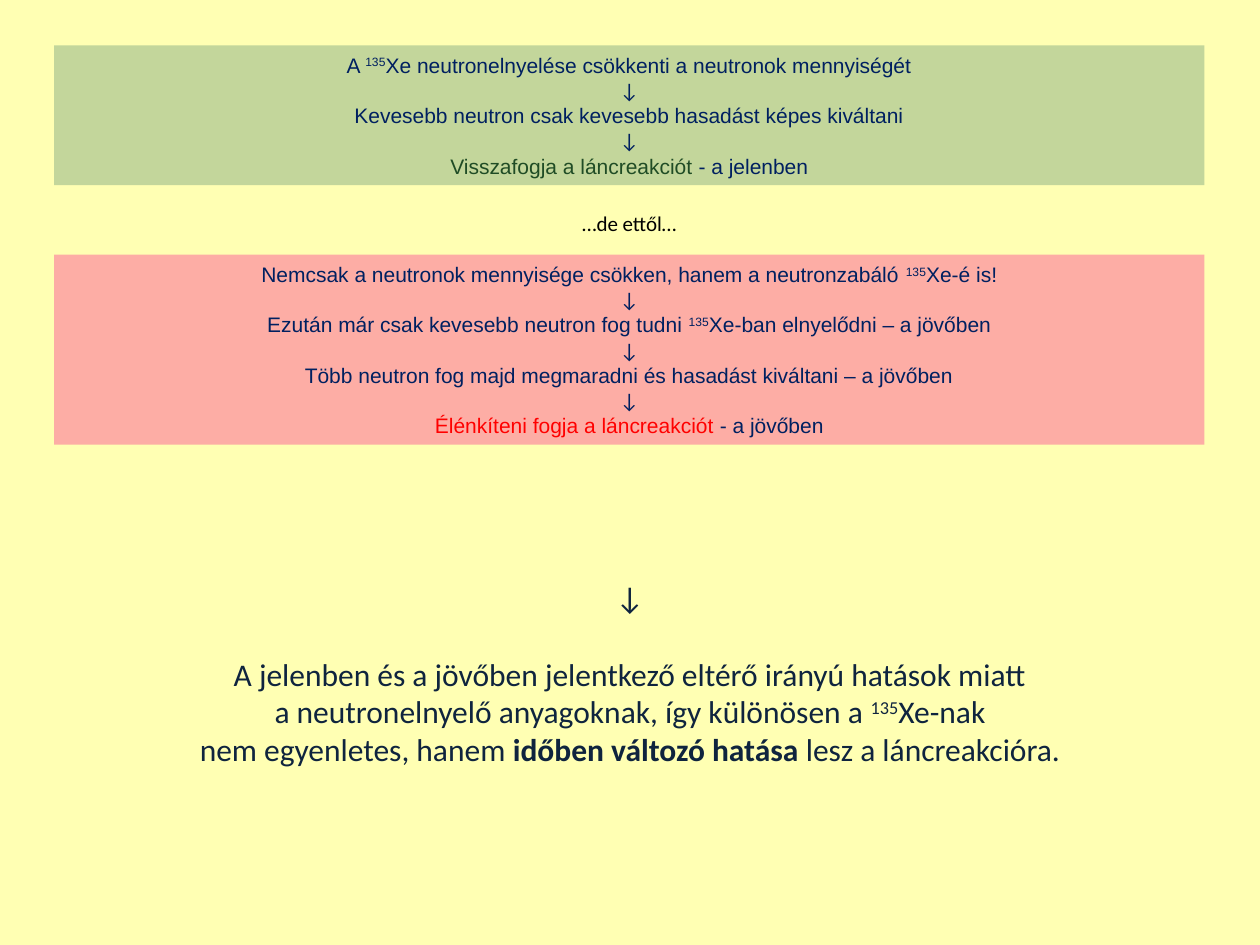
from pptx import Presentation
from pptx.dml.color import RGBColor
from pptx.enum.shapes import MSO_SHAPE
from pptx.enum.text import MSO_AUTO_SIZE, PP_ALIGN
from pptx.util import Inches, Pt

RECTANGLE = MSO_SHAPE.RECTANGLE
FIT_SHAPE = MSO_AUTO_SIZE.SHAPE_TO_FIT_TEXT
CENTER = PP_ALIGN.CENTER

CREAM = RGBColor(0xFF, 0xFF, 0xB3)
GREEN = RGBColor(0xC3, 0xD6, 0x9B)
PINK = RGBColor(0xFD, 0xAD, 0xA5)
NAVY = RGBColor(0x00, 0x20, 0x60)
DARK_BLUE = RGBColor(0x0F, 0x24, 0x3E)
DARK_GREEN = RGBColor(0x20, 0x4C, 0x25)
RED = RGBColor(0xFF, 0x00, 0x00)
BLACK = RGBColor(0x00, 0x00, 0x00)

ARROW = "↓"
XENON_MASS = ("135", {"superscript": True})
LEFT, WIDTH = 0.43, 9.13

PRESENT_STEPS = [
    ["A ", XENON_MASS, "Xe neutronelnyelése csökkenti a neutronok mennyiségét"],
    ["Kevesebb neutron csak kevesebb hasadást képes kiváltani"],
    [("Visszafogja a láncreakciót ", {"color": DARK_GREEN}), "- a jelenben"],
]
FUTURE_STEPS = [
    ["Nemcsak a neutronok mennyisége csökken, hanem a neutronzabáló ", XENON_MASS, "Xe-é is!"],
    ["Ezután már csak kevesebb neutron fog tudni ", XENON_MASS, "Xe-ban elnyelődni – a jövőben"],
    ["Több neutron fog majd megmaradni és hasadást kiváltani – a jövőben"],
    [("Élénkíteni fogja a láncreakciót ", {"color": RED}), "- a jövőben"],
]
CONCLUSION = [
    "A jelenben és a jövőben jelentkező eltérő irányú hatások miatt\n"
    "a neutronelnyelő anyagoknak, így különösen a ",
    XENON_MASS,
    "Xe-nak\nnem egyenletes, hanem ",
    ("időben változó hatása ", {"bold": True}),
    "lesz a láncreakcióra.",
]


def add_text(paragraph, text, *, font="Calibri", size=12, color=BLACK, bold=False, superscript=False):
    """Append formatted text to a paragraph, turning newlines into line breaks."""
    for index, line in enumerate(text.split("\n")):
        if index:
            paragraph.add_line_break()
        run = paragraph.add_run()
        run.text = line
        run.font.name = font
        run.font.size = Pt(size)
        run.font.bold = bold
        run.font.color.rgb = color
        if superscript:
            run.font._element.set("baseline", "30000")


def fill_frame(shape, paragraphs, space_before=0):
    """Fill a shape with centred paragraphs, each a list of pieces and a base format."""
    frame = shape.text_frame
    frame.word_wrap = True
    frame.auto_size = FIT_SHAPE
    for index, (pieces, base) in enumerate(paragraphs):
        paragraph = frame.add_paragraph() if index else frame.paragraphs[0]
        paragraph.alignment = CENTER
        if index and space_before:
            paragraph.space_before = Pt(space_before)
        for piece in pieces:
            text, changes = (piece, {}) if isinstance(piece, str) else piece
            add_text(paragraph, text, **{**base, **changes})


def add_chain(slide, left, top, width, height, steps, color):
    """Draw a coloured panel whose steps are linked by arrows."""
    panel = slide.shapes.add_shape(RECTANGLE, Inches(left), Inches(top), Inches(width), Inches(height))
    panel.shadow.inherit = False
    panel.fill.solid()
    panel.fill.fore_color.rgb = color
    panel.line.fill.background()
    paragraphs = []
    for step in steps:
        if paragraphs:
            paragraphs.append(([ARROW], {"color": NAVY}))
        paragraphs.append((step, {"font": "Arial", "color": NAVY}))
    fill_frame(panel, paragraphs)


def add_note(slide, left, top, width, height, paragraphs, space_before=0):
    """Place a text box with centred paragraphs."""
    box = slide.shapes.add_textbox(Inches(left), Inches(top), Inches(width), Inches(height))
    fill_frame(box, paragraphs, space_before)


def main():
    """Build and save the slide."""
    presentation = Presentation()
    presentation.slide_width = Inches(10)
    presentation.slide_height = Inches(7.5)
    slide = presentation.slides.add_slide(presentation.slide_layouts[6])
    slide.background.fill.solid()
    slide.background.fill.fore_color.rgb = CREAM

    large = {"size": 18, "color": DARK_BLUE}
    add_note(slide, 1.3, 4.54, 7.4, 1.62, [([ARROW], large), (CONCLUSION, large)], space_before=22)
    add_chain(slide, LEFT, 0.36, WIDTH, 1.11, PRESENT_STEPS, GREEN)
    add_chain(slide, LEFT, 2.02, WIDTH, 1.51, FUTURE_STEPS, PINK)
    add_note(slide, LEFT, 1.62, WIDTH, 0.3, [(["…de ettől…"], {})])
    presentation.save("out.pptx")


if __name__ == "__main__":
    main()
